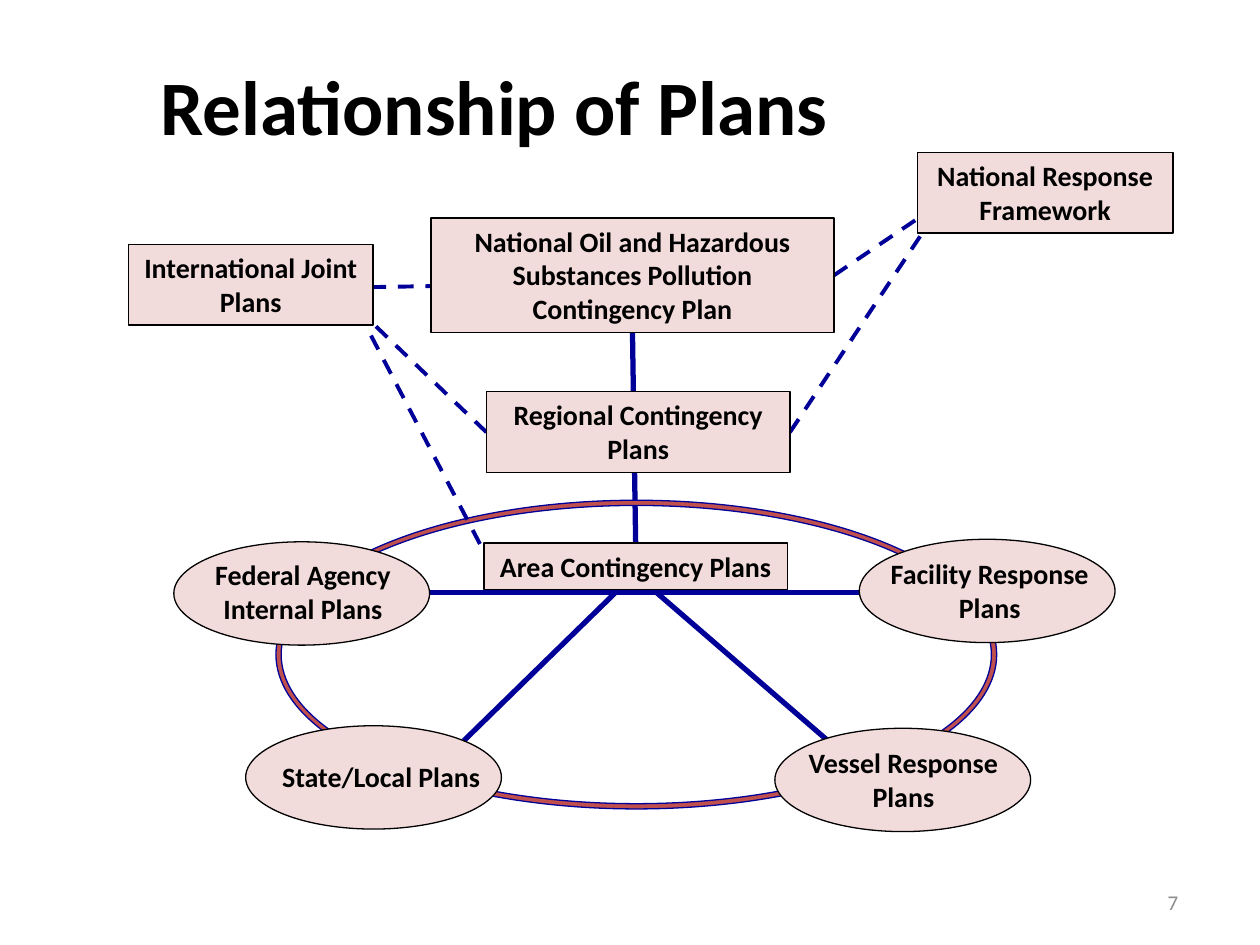
from lxml import etree
from pptx import Presentation
from pptx.dml.color import RGBColor
from pptx.enum import dml, shapes, text
from pptx.oxml.ns import qn
from pptx.util import Inches, Pt

NAVY, ROSE, BRICK, BLACK, GREY = "000099", "F2DCDB", "C0504D", "000000", "8C8C8C"
CENTER, RIGHT = text.PP_ALIGN.CENTER, text.PP_ALIGN.RIGHT
TOP, LEFT, BOTTOM, RIGHT_SIDE = range(4)
OVAL_SIZE = (2.03, 0.82)


def color(hex_value):
    """Turn a hex string into a colour."""
    return RGBColor.from_string(hex_value)


def inches(values):
    """Turn numbers into lengths."""
    return [Inches(value) for value in values]


def write(shape, words, size=16, bold=True, ink=BLACK, align=CENTER,
          anchor=text.MSO_ANCHOR.TOP):
    """Write one formatted paragraph into a shape."""
    frame = shape.text_frame
    frame.text = words
    frame.word_wrap = True
    frame.vertical_anchor = anchor
    paragraph = frame.paragraphs[0]
    paragraph.alignment = align
    font = paragraph.runs[0].font
    font.name, font.size, font.bold = "Calibri", Pt(size), bold
    font.color.rgb = color(ink)


def add_outline(parent, preset, box, fill=ROSE, line=BLACK):
    """Add a filled preset shape with a thin outline."""
    shape = parent.add_shape(preset, *inches(box))
    shape.shadow.inherit = False
    shape.fill.solid()
    shape.fill.fore_color.rgb = color(fill)
    shape.line.color.rgb = color(line)
    shape.line.width = Pt(0.75)
    return shape


def add_plan(slide, words, box):
    """Add a rectangular plan box."""
    plan = add_outline(slide.shapes, shapes.MSO_SHAPE.RECTANGLE, box)
    write(plan, words)
    return plan


def add_oval_plan(slide, words, corner, label_box):
    """Add an oval grouped with its label."""
    group = slide.shapes.add_group_shape()
    add_outline(group.shapes, shapes.MSO_SHAPE.OVAL, (*corner, *OVAL_SIZE))
    write(group.shapes.add_textbox(*inches(label_box)), words)


def add_link(slide, start, end, dashed=False):
    """Draw a link between points or (plan, side) pairs."""
    joins = [isinstance(point[0], (int, float)) for point in (start, end)]
    first = start if joins[0] else (0, 0)
    last = end if joins[1] else (0, 0)
    link = slide.shapes.add_connector(shapes.MSO_CONNECTOR.STRAIGHT,
                                      *inches((*first, *last)))
    if not joins[0]:
        link.begin_connect(*start)
    if not joins[1]:
        link.end_connect(*end)
    link.line.color.rgb = color(NAVY)
    link.line.width = Pt(2.25 if dashed else 3)
    if dashed:
        link.line.dash_style = dml.MSO_LINE.DASH
    etree.SubElement(link._element.spPr, qn("a:effectLst"))


def add_heading(slide, box):
    """Place the slide title."""
    title = slide.shapes.title
    title.left, title.top, title.width, title.height = inches(box)
    write(title, "Relationship of Plans", size=44, anchor=text.MSO_ANCHOR.MIDDLE)


def add_page_number(slide, box):
    """Place the page number."""
    write(slide.shapes.add_textbox(*inches(box)), "7", size=12, bold=False,
          ink=GREY, align=RIGHT, anchor=text.MSO_ANCHOR.MIDDLE)


def add_plan_map(slide, ring_box):
    """Draw the plans, the ring and the links behind them."""
    national = add_plan(slide, "National Oil and Hazardous Substances Pollution "
                        "Contingency Plan", (3.42, 1.73, 3.2, 0.91))
    framework = add_plan(slide, "National Response Framework", (7.28, 1.21, 2.03, 0.64))
    joint = add_plan(slide, "International Joint Plans", (1.02, 1.94, 1.94, 0.64))
    regional = add_plan(slide, "Regional Contingency Plans", (3.86, 3.11, 2.41, 0.64))
    area = add_plan(slide, "Area Contingency Plans", (3.84, 4.31, 2.41, 0.37))

    add_link(slide, (area, TOP), (national, BOTTOM))
    ring = add_outline(slide.shapes, shapes.MSO_SHAPE.DONUT, ring_box, BRICK, NAVY)
    ring.adjustments[0] = 0.017
    for start, end in (((6.63, 5.93), (5.08, 4.59)),
                       ((3.68, 5.88), (4.98, 4.61)),
                       ((3.32, 4.7), (6.88, 4.7))):
        add_link(slide, start, end)
    for start, end in (((regional, RIGHT_SIDE), (7.32, 1.85)),
                       ((national, RIGHT_SIDE), (7.35, 1.69)),
                       ((3.91, 4.51), (2.88, 2.54)),
                       ((regional, LEFT), (2.91, 2.52)),
                       ((3.5, 2.27), (2.86, 2.28))):
        add_link(slide, start, end, dashed=True)

    for plan in (national, framework, joint, regional, area):
        slide.shapes._spTree.append(plan._element)
    for words, corner, label_box in (
            ("Federal Agency Internal Plans", (1.38, 4.3), (1.35, 4.38, 2.11, 0.64)),
            ("State/Local Plans", (1.95, 5.76), (1.97, 5.98, 2.11, 0.37)),
            ("Facility Response Plans", (6.82, 4.28), (6.8, 4.37, 2.11, 0.64)),
            ("Vessel Response Plans", (6.15, 5.78), (6.12, 5.87, 2.1, 0.64))):
        add_oval_plan(slide, words, corner, label_box)


def main():
    """Build and save the slide."""
    deck = Presentation()
    deck.slide_width, deck.slide_height = inches((10, 7.5))
    slide = deck.slides.add_slide(deck.slide_layouts[5])
    add_heading(slide, (0.29, 0.32, 7.27, 1.02))
    add_plan_map(slide, (2.19, 3.97, 5.72, 2.45))
    add_page_number(slide, (7.12, 6.96, 2.33, 0.4))
    deck.save("out.pptx")


if __name__ == "__main__":
    main()
